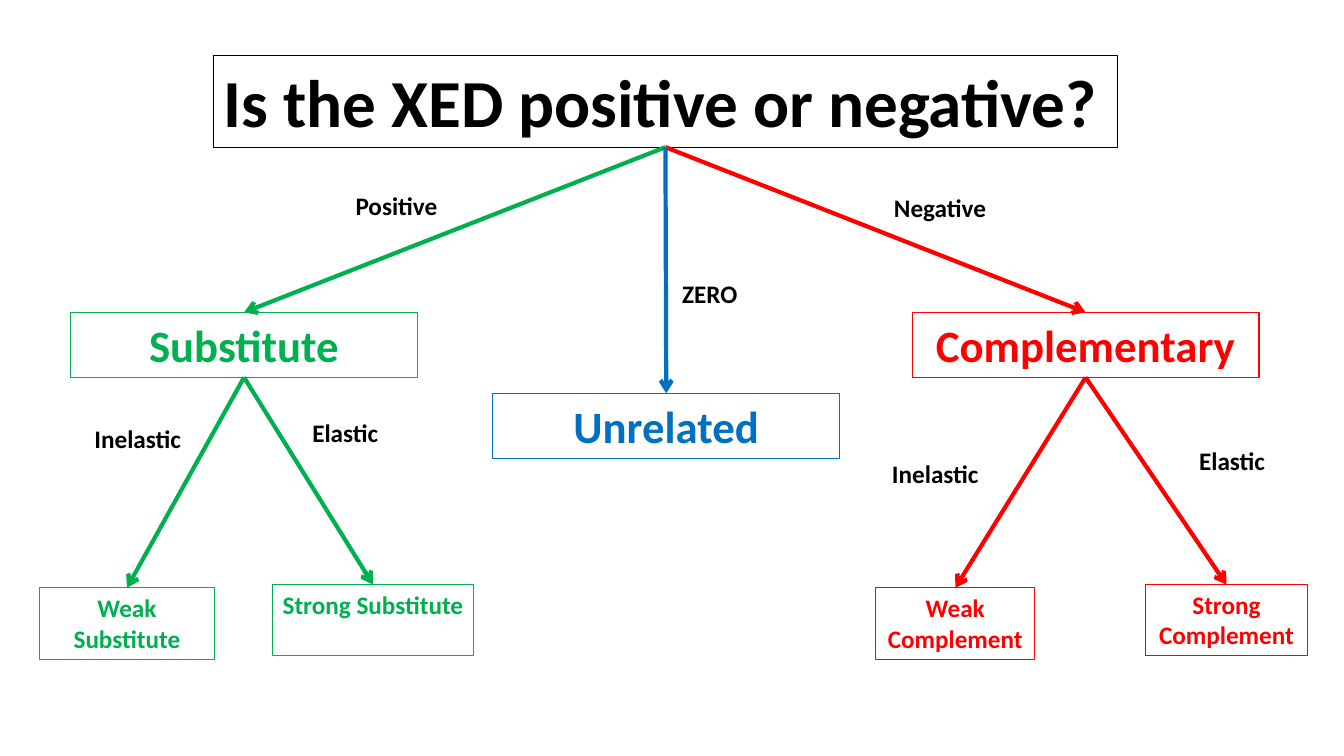
"""Builds a decision tree that classifies goods by cross elasticity of demand."""
from lxml import etree
from pptx import Presentation
from pptx.dml.color import RGBColor
from pptx.enum.shapes import MSO_CONNECTOR, MSO_SHAPE
from pptx.enum.text import MSO_ANCHOR, MSO_AUTO_SIZE, PP_ALIGN
from pptx.oxml.ns import qn
from pptx.util import Cm, Pt

RECTANGLE = MSO_SHAPE.RECTANGLE
STRAIGHT = MSO_CONNECTOR.STRAIGHT
TOP_ANCHOR = MSO_ANCHOR.TOP
GROW = MSO_AUTO_SIZE.SHAPE_TO_FIT_TEXT
LEFT, CENTER = PP_ALIGN.LEFT, PP_ALIGN.CENTER
TOP_SIDE, BOTTOM_SIDE = 0, 2

COLORS = {"black": "000000", "green": "00B050", "red": "FF0000", "blue": "0070C0"}
FONT = "Calibri"
GOOD_SIZE = (8.74, 1.64)
LEAF_HEIGHT = 1.8
LABEL_HEIGHT = 1.02
WEAK_TOP, STRONG_TOP = 14.81, 14.73


def color(name):
    return RGBColor.from_string(COLORS[name])


def write(frame, text, *, size=18, ink="black", align=LEFT, wrap=True):
    frame.word_wrap = wrap
    frame.auto_size = GROW
    frame.vertical_anchor = TOP_ANCHOR
    para = frame.paragraphs[0]
    para.text = text
    para.alignment = align
    for span in para.runs:
        span.font.name = FONT
        span.font.size = Pt(size)
        span.font.bold = True
        span.font.color.rgb = color(ink)


class TreePage:
    def __init__(self, deck):
        self.shapes = deck.slides.add_slide(deck.slide_layouts[6]).shapes

    def box(self, text, left, top, width, height, ink, size=18, align=CENTER):
        box = self.shapes.add_shape(RECTANGLE, Cm(left), Cm(top), Cm(width), Cm(height))
        box.shadow.inherit = False
        box.fill.background()
        box.line.color.rgb = color(ink)
        box.line.width = Pt(0.75)
        write(box.text_frame, text, size=size, ink=ink, align=align)
        return box

    def label(self, text, left, top, width):
        label = self.shapes.add_textbox(Cm(left), Cm(top), Cm(width), Cm(LABEL_HEIGHT))
        write(label.text_frame, text, wrap=False)

    def arrow(self, parent, child, ink):
        arrow = self.shapes.add_connector(STRAIGHT, 0, 0, 0, 0)
        arrow.begin_connect(parent, BOTTOM_SIDE)
        arrow.end_connect(child, TOP_SIDE)
        arrow.line.color.rgb = color(ink)
        arrow.line.width = Pt(3)
        etree.SubElement(arrow.line._get_or_add_ln(), qn("a:tailEnd"), type="arrow")
        etree.SubElement(arrow._element.spPr, qn("a:effectLst"))


def main():
    deck = Presentation()
    deck.slide_width, deck.slide_height = Cm(33.87), Cm(19.05)
    page = TreePage(deck)
    question = page.box("Is the XED positive or negative?", 5.38, 1.4, 22.78, 2.31,
                        "black", size=48, align=LEFT)

    goods = [
        ("Substitute", 1.78, 7.87, "green", [
            ("Weak Substitute", 0.99, WEAK_TOP, 4.42),
            ("Strong Substitute", 6.86, STRONG_TOP, 5.08)]),
        ("Complementary", 22.99, 7.87, "red", [
            ("Weak Complement", 22.07, WEAK_TOP, 4.01),
            ("Strong\nComplement", 28.88, STRONG_TOP, 4.06)]),
        ("Unrelated", 12.42, 9.91, "blue", []),
    ]
    for name, left, top, ink, leaves in goods:
        good = page.box(name, left, top, *GOOD_SIZE, ink, size=32)
        page.arrow(question, good, ink)
        for text, leaf_left, leaf_top, width in leaves:
            leaf = page.box(text, leaf_left, leaf_top, width, LEAF_HEIGHT, ink)
            page.arrow(good, leaf, ink)

    labels = [
        ("Positive", 8.71, 4.67, 2.59),
        ("Negative", 22.28, 4.72, 2.84),
        ("ZERO", 16.94, 6.88, 1.93),
        ("Inelastic", 2.13, 10.54, 2.72),
        ("Elastic", 7.62, 10.39, 2.18),
        ("Inelastic", 22.23, 11.43, 2.72),
        ("Elastic", 29.97, 11.1, 2.18),
    ]
    for label in labels:
        page.label(*label)
    deck.save("out.pptx")


if __name__ == "__main__":
    main()
